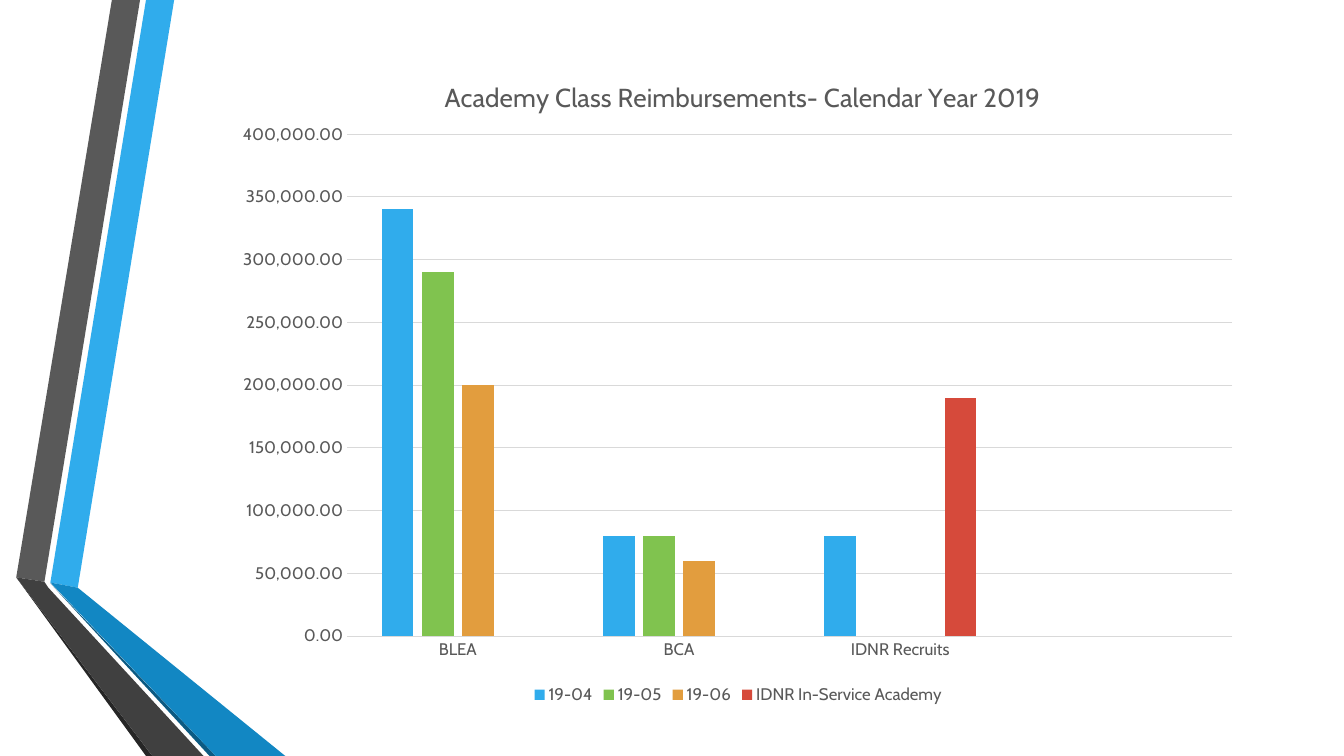
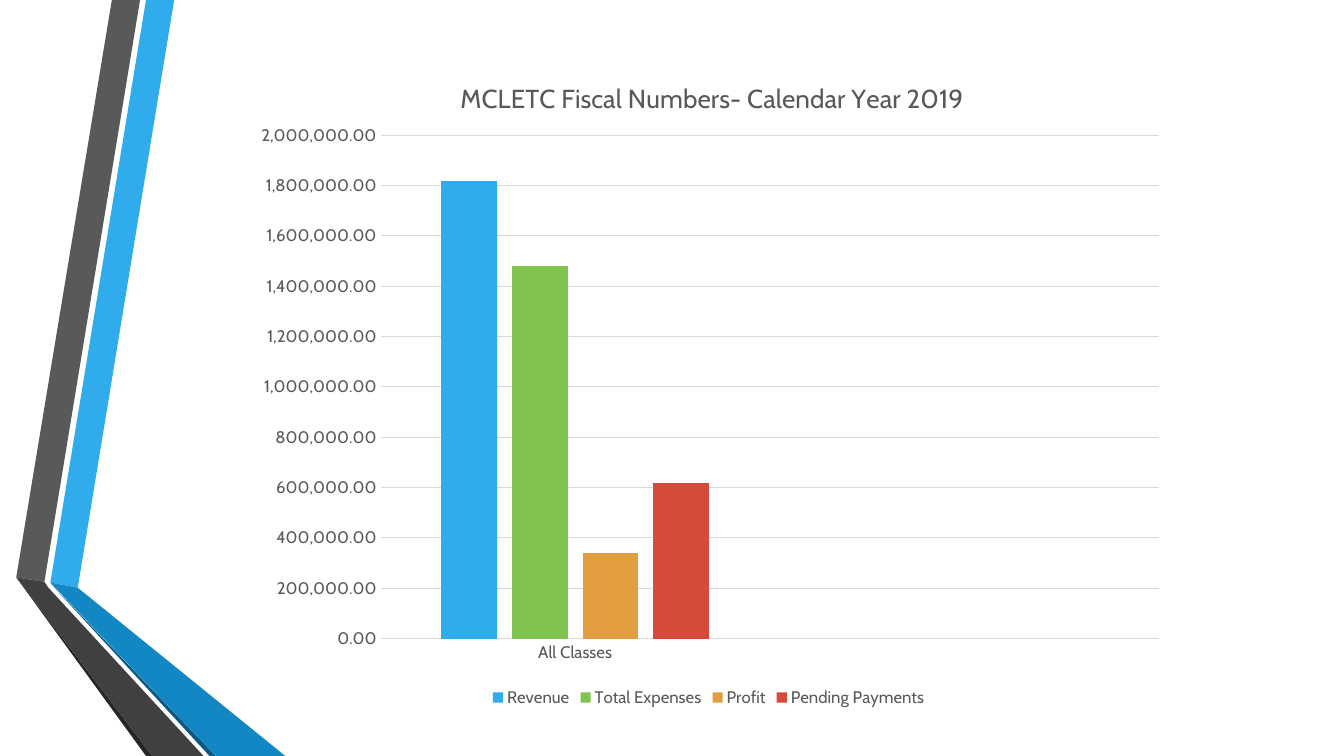
from dataclasses import dataclass
from lxml.etree import SubElement
from pptx import Presentation
from pptx.chart.data import CategoryChartData
from pptx.dml.color import RGBColor
from pptx.enum.chart import XL_CHART_TYPE, XL_LEGEND_POSITION, XL_TICK_MARK
from pptx.oxml.ns import qn
from pptx.util import Cm, Pt


@dataclass(frozen=True)
class Theme:
    font: str = "Cabin"
    text: str = "595959"
    grid: str = "D9D9D9"
    blue: str = "30ACEC"
    deep_blue: str = "1287C3"
    navy: str = "0C5A82"
    gray: str = "595959"
    dark_gray: str = "404040"
    black: str = "262626"
    series: tuple = ("30ACEC", "80C34F", "E29D3E", "D64A3B")
    title_size: float = 18.6
    label_size: float = 12
    line_width: float = 0.75


THEME = Theme()

RIBBONS = (
    (THEME.blue, ((1.27, 14.68), (1.96, 14.81), (4.39, 0), (3.68, 0))),
    (THEME.gray, ((3.53, 0), (2.82, 0), (0.41, 14.55), (1.12, 14.66))),
    (THEME.black, ((0.41, 14.55), (3.68, 19.05), (3.84, 19.05))),
    (THEME.navy, ((1.27, 14.7), (5.28, 19.05), (5.44, 19.05))),
    (THEME.deep_blue, ((1.27, 14.68), (5.44, 19.05), (7.19, 19.05), (1.96, 14.81))),
    (THEME.dark_gray, ((5.13, 19.05), (1.22, 14.81), (1.12, 14.66), (0.41, 14.55), (3.84, 19.05))),
)

CHARTS = (
    {
        "title": "Academy Class Reimbursements- Calendar Year 2019",
        "box": (5.64, 1.22, 25.93, 16.64),
        "title_at": {"x": 0.21, "y": 0.04},
        "plot_at": {"x": 0.12, "y": 0.13, "w": 0.86, "h": 0.76},
        "categories": ("BLEA", "BCA", "IDNR Recruits", ""),
        "series": {
            "19-04": (340000, 80000, 80000, None),
            "19-05": (290000, 80000, None, None),
            "19-06": (200000, 60000, None, None),
            "IDNR In-Service Academy": (None, None, 190000, None),
        },
        "scale": {"minimum_scale": 0, "maximum_scale": 400000, "major_unit": 50000},
    },
    {
        "title": "MCLETC Fiscal Numbers- Calendar Year 2019",
        "box": (6.05, 1.24, 23.62, 16.69),
        "title_at": {"x": 0.23, "y": 0.04},
        "plot_at": {"x": 0.15, "y": 0.13, "w": 0.83, "h": 0.76},
        "categories": ("All Classes", ""),
        "series": {
            "Revenue": (1820000, None),
            "Total Expenses": (1480000, None),
            "Profit": (340000, None),
            "Pending Payments": (620000, None),
        },
        "scale": {"minimum_scale": 0, "maximum_scale": 2000000, "major_unit": 200000},
    },
)


def assign(target, values):
    for name, value in values.items():
        setattr(target, name, value)


def style_font(font, size):
    assign(font, {"name": THEME.font, "size": Pt(size), "bold": False})
    font.color.rgb = RGBColor.from_string(THEME.text)


def style_line(line):
    line.color.rgb = RGBColor.from_string(THEME.grid)
    line.width = Pt(THEME.line_width)


def set_layout(parent, index, fractions, inner=False):
    for old in parent.findall(qn("c:layout")):
        parent.remove(old)
    layout = SubElement(parent, qn("c:layout"))
    parent.insert(index, layout)
    manual = SubElement(layout, qn("c:manualLayout"))
    entries = {"layoutTarget": "inner"} if inner else {}
    entries.update({"xMode": "edge", "yMode": "edge"})
    entries.update(fractions)
    for name, value in entries.items():
        SubElement(manual, qn(f"c:{name}")).set("val", str(value))


def add_ribbons(page, layout, left, top):
    for color, points in RIBBONS:
        corners = [(Cm(left + x), Cm(top + y)) for x, y in points]
        builder = page.shapes.build_freeform(*corners[0], scale=1.0)
        builder.add_line_segments(corners[1:], close=True)
        ribbon = builder.convert_to_shape()
        ribbon.shadow.inherit = False
        ribbon.fill.solid()
        ribbon.fill.fore_color.rgb = RGBColor.from_string(color)
        ribbon.line.fill.background()
        layout.shapes.element.append(ribbon.element)


def style_axes(chart, scale):
    for axis in (chart.category_axis, chart.value_axis):
        assign(axis, {"major_tick_mark": XL_TICK_MARK.NONE, "minor_tick_mark": XL_TICK_MARK.NONE})
        style_font(axis.tick_labels.font, THEME.label_size)
    style_line(chart.category_axis.format.line)
    values = chart.value_axis
    assign(values, scale)
    assign(values.tick_labels, {"number_format": "#,##0.00", "number_format_is_linked": False})
    values.format.line.fill.background()
    style_line(values.major_gridlines.format.line)


def add_column_chart(page, content):
    data = CategoryChartData(number_format="#,##0.00")
    data.categories = content["categories"]
    for name, values in content["series"].items():
        data.add_series(name, values)
    box = [Cm(length) for length in content["box"]]
    chart = page.shapes.add_chart(XL_CHART_TYPE.COLUMN_CLUSTERED, *box, data).chart
    style_font(chart.font, THEME.label_size)
    assign(chart, {"has_title": True, "has_legend": True})

    frame = chart.chart_title.text_frame
    frame.text = content["title"]
    style_font(frame.paragraphs[0].runs[0].font, THEME.title_size)
    set_layout(chart.chart_title.element, 1, content["title_at"])
    set_layout(chart.element.find(f".//{qn('c:plotArea')}"), 0, content["plot_at"], inner=True)

    assign(chart.legend, {"position": XL_LEGEND_POSITION.BOTTOM, "include_in_layout": False})
    style_font(chart.legend.font, THEME.label_size)
    style_axes(chart, content["scale"])

    plot = chart.plots[0]
    assign(plot, {"gap_width": 219, "overlap": -27, "vary_by_categories": False})
    for series, color in zip(plot.series, THEME.series):
        series.invert_if_negative = False
        series.format.fill.solid()
        series.format.fill.fore_color.rgb = RGBColor.from_string(color)


def main():
    deck = Presentation()
    assign(deck, {"slide_width": Cm(33.87), "slide_height": Cm(19.05)})
    layout = deck.slide_layouts[6]
    pages = [deck.slides.add_slide(layout) for _ in CHARTS]
    add_ribbons(pages[0], layout, 0, 0)
    for page, content in zip(pages, CHARTS):
        add_column_chart(page, content)
    deck.save("out.pptx")


if __name__ == "__main__":
    main()
